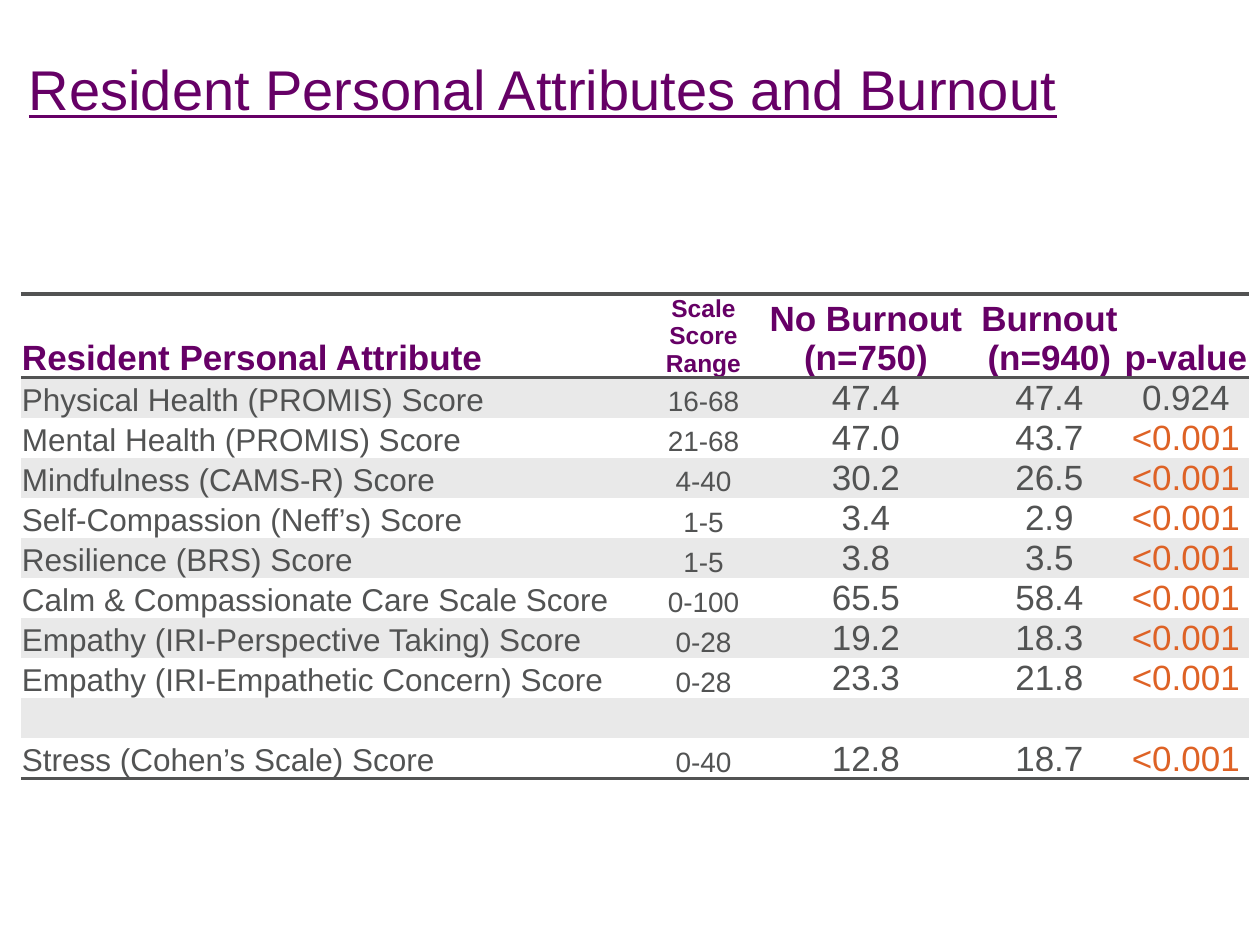
from dataclasses import dataclass

from lxml import etree
from pptx import Presentation
from pptx.dml.color import RGBColor
from pptx.enum.text import MSO_ANCHOR, PP_ALIGN
from pptx.oxml.ns import qn
from pptx.util import Emu, Pt

LEFT, CENTER = PP_ALIGN.LEFT, PP_ALIGN.CENTER
TOP, BOTTOM = MSO_ANCHOR.TOP, MSO_ANCHOR.BOTTOM
PX = 914400 / 126
NO_STYLE = "{2D5ABB26-0587-4C30-8999-92F81FD0307C}"


@dataclass(frozen=True)
class Theme:
    font: str = "Arial"
    purple: str = "660066"
    gray: str = "525353"
    orange: str = "DE6225"
    band: str = "E9E9E9"
    white: str = "FFFFFF"
    title: int = 32
    heads: tuple = (20, 14, 20, 20, 20)
    body: tuple = (18, 16, 20, 20, 20)
    rule: int = 2


def px(n):
    return Emu(round(n * PX))


class Deck:
    def __init__(self, theme, width, height):
        self.theme = theme
        self.prs = Presentation()
        self.prs.slide_width, self.prs.slide_height = px(width), px(height)
        self.s = self.prs.slides.add_slide(self.prs.slide_layouts[5])

    def style(self, p, size, color, bold=False, underline=False, align=LEFT):
        p.alignment = align
        for r in p.runs:
            f = r.font
            f.name, f.size, f.bold, f.underline = self.theme.font, Pt(size), bold, underline
            f.color.rgb = RGBColor.from_string(color)

    def title(self, text, x, y, w, h):
        sp = self.s.shapes.title
        sp.left, sp.top, sp.width, sp.height = px(x), px(y), px(w), px(h)
        tf = sp.text_frame
        tf.text = text
        tf.vertical_anchor = TOP
        tf.margin_left, tf.margin_top = px(8), px(11)
        self.style(tf.paragraphs[0], self.theme.title, self.theme.purple, underline=True)

    def border(self, cell, side):
        ln = etree.SubElement(cell._tc.get_or_add_tcPr(), qn(f"a:ln{side}"), w=str(Pt(self.theme.rule)))
        fill = etree.SubElement(ln, qn("a:solidFill"))
        etree.SubElement(fill, qn("a:srgbClr"), val=self.theme.gray)

    def cell(self, cell, text, size, color, fill, bold, align, sides):
        cell.text = text
        cell.vertical_anchor = BOTTOM
        cell.margin_left = cell.margin_right = cell.margin_top = px(1)
        cell.margin_bottom = 0
        self.style(cell.text_frame.paragraphs[0], size, color, bold, align=align)
        for side in sides:
            self.border(cell, side)
        cell.fill.solid()
        cell.fill.fore_color.rgb = RGBColor.from_string(fill)

    def table(self, rows, x, y, widths, head_h, row_h):
        t = self.theme
        heights = [head_h] + [row_h] * (len(rows) - 1)
        frame = self.s.shapes.add_table(
            len(rows), len(widths), px(x), px(y), px(sum(widths)), px(sum(heights)))
        table = frame.table
        table.first_row = table.horz_banding = False
        next(frame.element.iter(qn("a:tableStyleId"))).text = NO_STYLE
        for col, w in zip(table.columns, widths):
            col.width = px(w)
        for i, (row, h, texts) in enumerate(zip(table.rows, heights, rows)):
            row.height = px(h)
            head = i == 0
            sides = "TB" if head else "B" if i == len(rows) - 1 else ""
            sizes = t.heads if head else t.body
            for j, text in enumerate(texts):
                color = t.purple if head else t.orange if text.startswith("<") else t.gray
                self.cell(row.cells[j], text, sizes[j], color, t.band if i % 2 else t.white,
                          head, CENTER if j else LEFT, sides)


ROWS = [
    ("Resident Personal Attribute", "Scale Score Range", "No Burnout (n=750)", "Burnout (n=940)", "p-value"),
    ("Physical Health (PROMIS) Score", "16-68", "47.4", "47.4", "0.924"),
    ("Mental Health (PROMIS) Score", "21-68", "47.0", "43.7", "<0.001"),
    ("Mindfulness (CAMS-R) Score", "4-40", "30.2", "26.5", "<0.001"),
    ("Self-Compassion (Neff’s) Score", "1-5", "3.4", "2.9", "<0.001"),
    ("Resilience (BRS) Score", "1-5", "3.8", "3.5", "<0.001"),
    ("Calm & Compassionate Care Scale Score", "0-100", "65.5", "58.4", "<0.001"),
    ("Empathy (IRI-Perspective Taking) Score", "0-28", "19.2", "18.3", "<0.001"),
    ("Empathy (IRI-Empathetic Concern) Score", "0-28", "23.3", "21.8", "<0.001"),
    ("",) * 5,
    ("Stress (Cohen’s Scale) Score", "0-40", "12.8", "18.7", "<0.001"),
]


def main():
    deck = Deck(Theme(), 1260, 945)
    deck.title("Resident Personal Attributes and Burnout", 21, 43, 1166, 120)
    deck.table(ROWS, 21, 294, (630, 105, 220, 147, 126), 83, 40)
    deck.prs.save("out.pptx")


if __name__ == "__main__":
    main()
